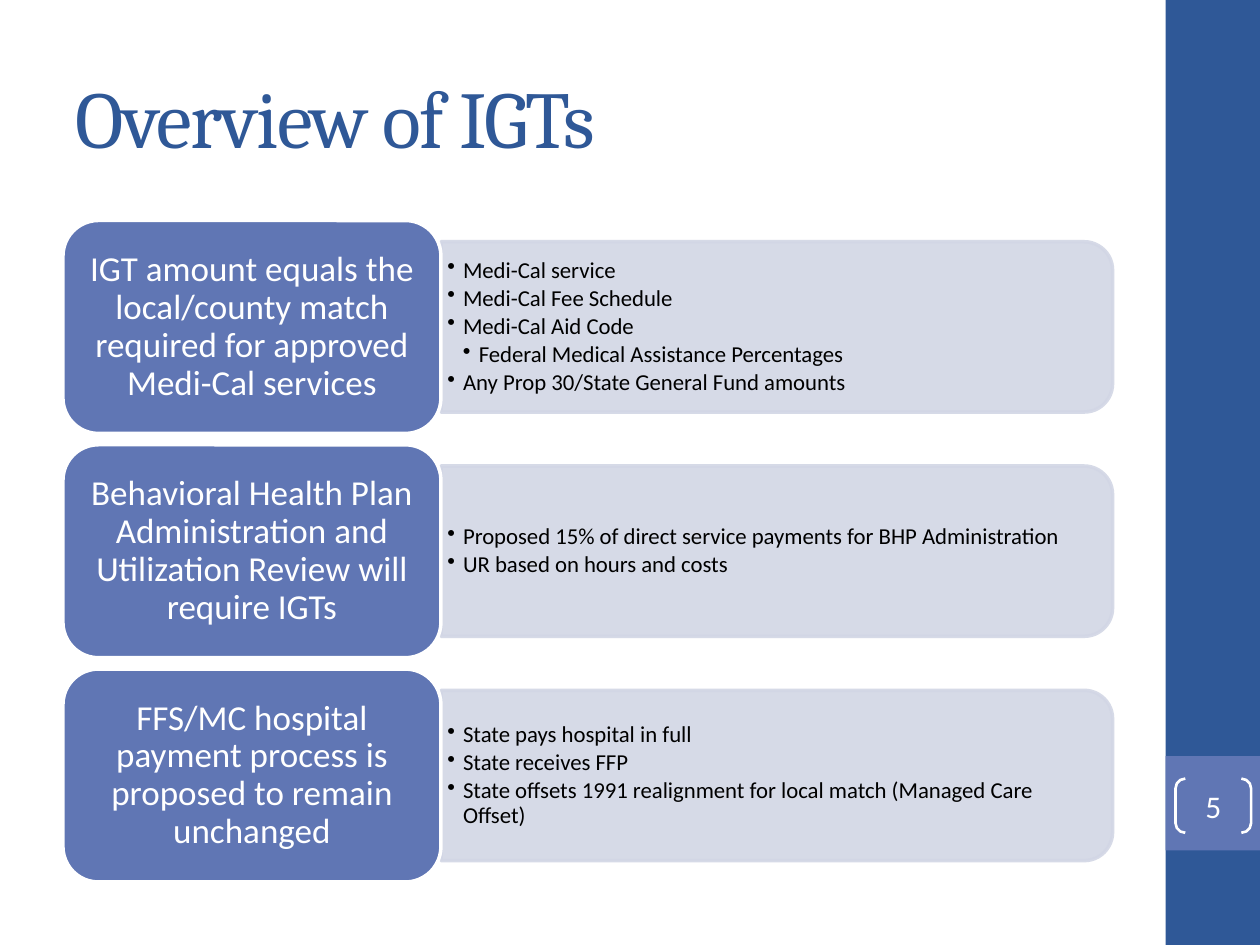
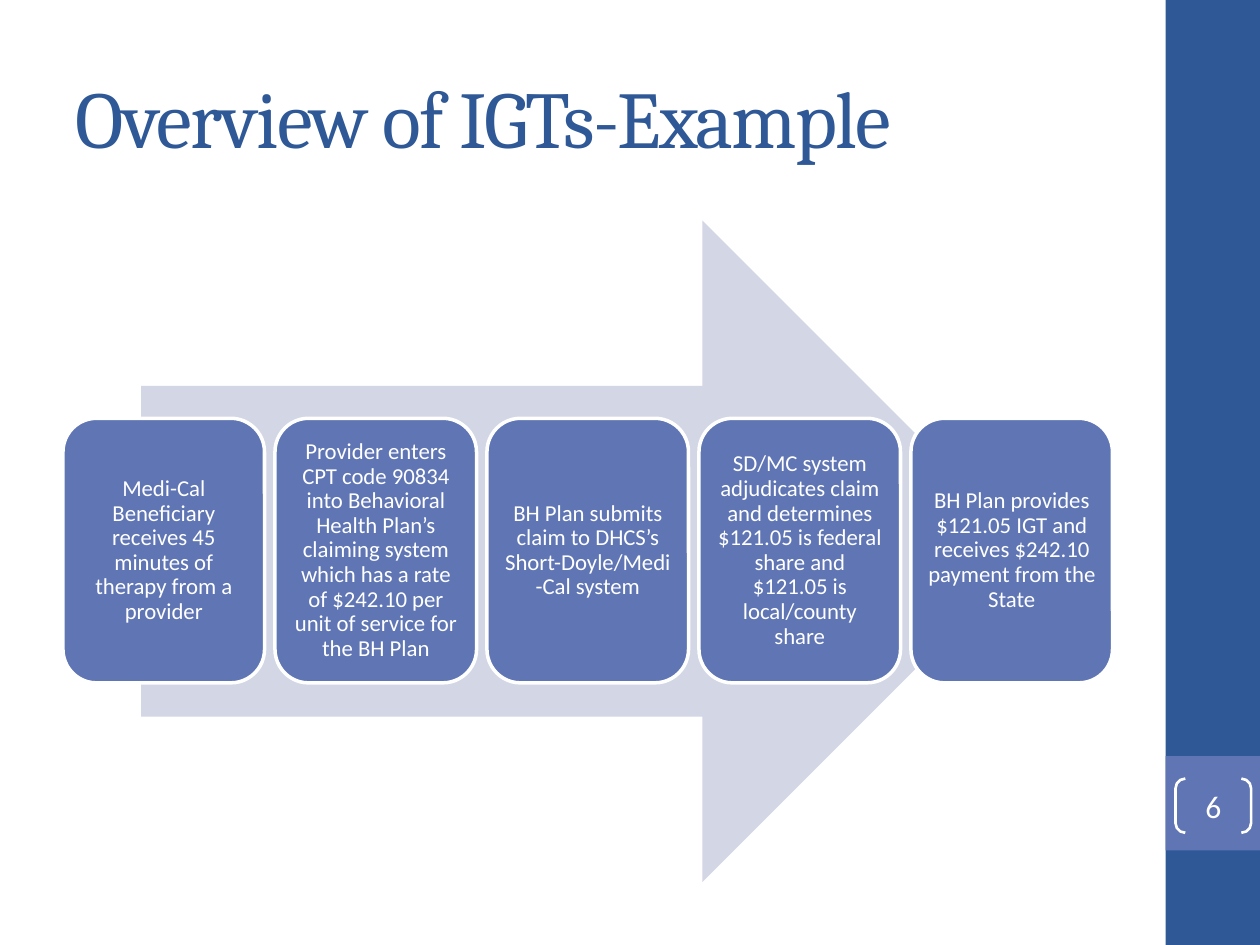
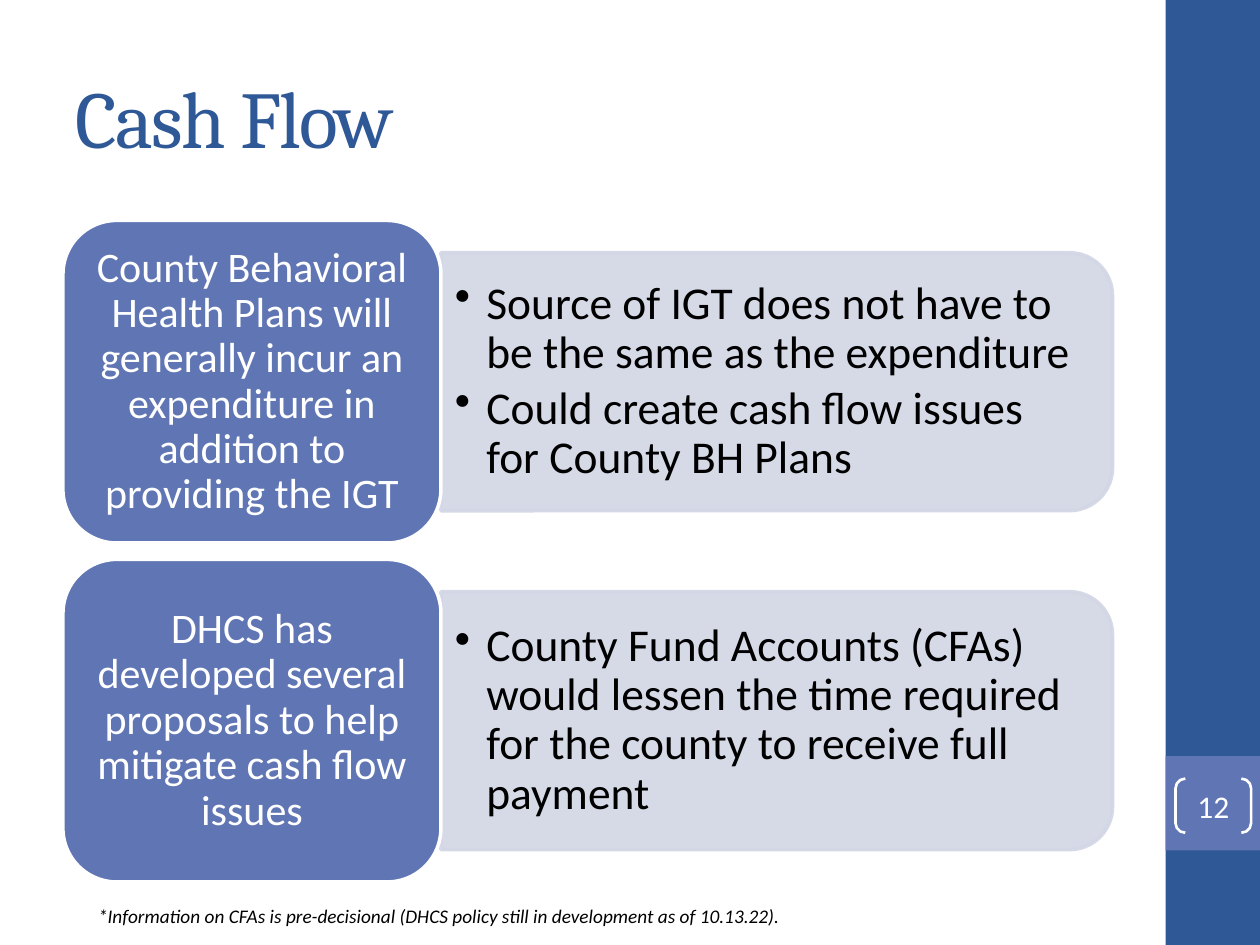
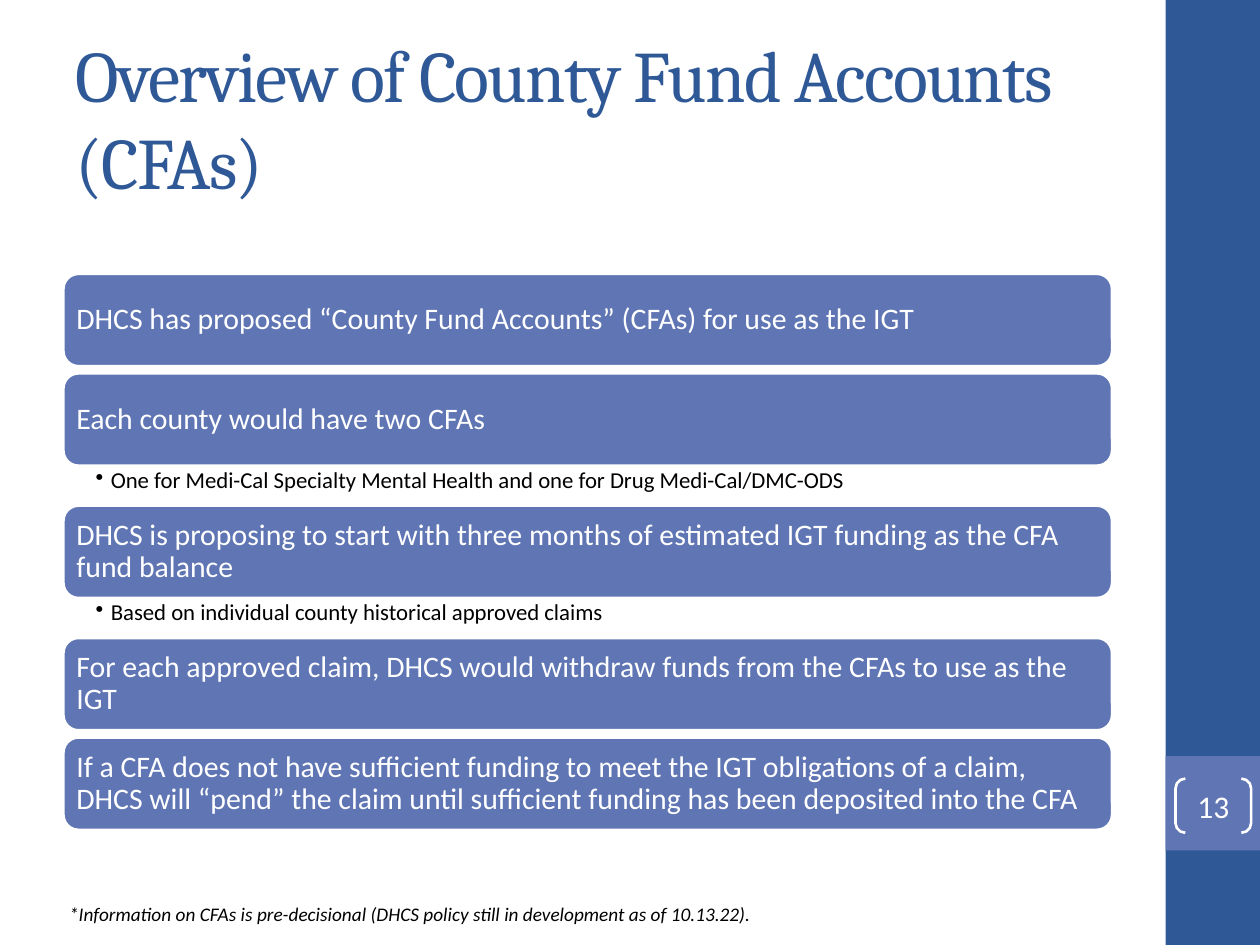
"""Build four slides on intergovernmental transfers (IGTs) and county fund accounts."""
from lxml import etree
from pptx import Presentation
from pptx.dml.color import RGBColor
from pptx.enum.shapes import MSO_SHAPE
from pptx.enum.text import MSO_ANCHOR, MSO_AUTO_SIZE, PP_ALIGN
from pptx.oxml.ns import qn
from pptx.util import Inches, Pt

NAVY = RGBColor(0x2F, 0x58, 0x97)
BLUE = RGBColor(0x60, 0x76, 0xB4)
PALE = RGBColor(0xD2, 0xD6, 0xE5)
WHITE = RGBColor(0xFF, 0xFF, 0xFF)
BLACK = RGBColor(0x00, 0x00, 0x00)
RECTANGLE = MSO_SHAPE.RECTANGLE
ROUNDED = MSO_SHAPE.ROUNDED_RECTANGLE
TOP_ROUNDED = MSO_SHAPE.ROUND_2_SAME_RECTANGLE
ARROW = MSO_SHAPE.RIGHT_ARROW
BRACKETS = MSO_SHAPE.DOUBLE_BRACKET
MIDDLE, TOP = MSO_ANCHOR.MIDDLE, MSO_ANCHOR.TOP
LEFT, CENTER = PP_ALIGN.LEFT, PP_ALIGN.CENTER
NO_AUTOFIT = MSO_AUTO_SIZE.NONE
TITLE_FONT, BODY_FONT = "Cambria", "Calibri"
MARGIN, CONTENT_WIDTH, CARD_WIDTH = 0.5, 8.33, 3
CONTENT_TOP = 1.75
FOOTNOTE = "*Information on CFAs is pre-decisional (DHCS policy still in development as of 10.13.22)."


def add_box(slide, kind, box, fill=None, line=None, line_width=2):
    """Add a flat preset shape; box is left, top, width, height in inches."""
    shape = slide.shapes.add_shape(kind, *map(Inches, box))
    shape.shadow.inherit = False
    if fill is None:
        shape.fill.background()
    else:
        shape.fill.solid()
        shape.fill.fore_color.rgb = fill
    if line is None:
        shape.line.fill.background()
    else:
        shape.line.color.rgb = line
        shape.line.width = Pt(line_width)
    return shape


def write(shape, lines, size, color=WHITE, font=BODY_FONT, insets=(0.1, 0.05, 0.1, 0.05),
          align=LEFT, anchor=MIDDLE, spacing=0.9, after=0.35, hang=0, italic=False):
    """Fill a shape with (level, text) lines; levels above 0 are bulleted."""
    frame = shape.text_frame
    margins = zip(("margin_left", "margin_top", "margin_right", "margin_bottom"), map(Inches, insets))
    frame_format = {"word_wrap": True, "auto_size": NO_AUTOFIT, "vertical_anchor": anchor, **dict(margins)}
    for name, value in frame_format.items():
        setattr(frame, name, value)
    for index, (level, text) in enumerate(lines):
        paragraph = frame.add_paragraph() if index else frame.paragraphs[0]
        paragraph_format = {"level": level, "alignment": align, "line_spacing": spacing,
                            "space_before": Pt(0), "space_after": Pt(size * after)}
        for name, value in paragraph_format.items():
            setattr(paragraph, name, value)
        run = paragraph.add_run()
        run.text = text
        for name, value in {"name": font, "size": Pt(size), "italic": italic}.items():
            setattr(run.font, name, value)
        run.font.color.rgb = color
        if level:
            properties = paragraph._p.get_or_add_pPr()
            properties.set("marL", str(Inches(hang * level)))
            properties.set("indent", str(-Inches(hang)))
            etree.SubElement(properties, qn("a:buChar")).set("char", "•")


presentation = Presentation()
presentation.slide_width = Inches(10)
presentation.slide_height = Inches(7.5)
layout = presentation.slide_layouts[5]

pages = [
    ("Overview of IGTs", 46, "5"),
    ("Overview of IGTs-Example", 46, "6"),
    ("Cash Flow", 46, "12"),
    ("Overview of County Fund Accounts (CFAs)", 41.4, "13"),
]
slides = []
for title_text, title_size, number in pages:
    slide = presentation.slides.add_slide(layout)
    title = slide.shapes.title
    title.left, title.top = Inches(MARGIN), Inches(0.3)
    title.width, title.height = Inches(CONTENT_WIDTH), Inches(1.25)
    write(title, [(0, title_text)], title_size, NAVY, TITLE_FONT, spacing=1.0, after=0)
    for run_properties in title.element.iter(qn("a:rPr")):
        run_properties.set("spc", "-100")
    brackets = add_box(slide, BRACKETS, (9.33, 6.18, 0.6, 0.43), line=WHITE, line_width=1.5)
    brackets.adjustments[0] = 0.18
    write(brackets, [(0, number)], 18, insets=(0, 0, 0, 0), align=CENTER, spacing=1.0, after=0)
    slides.append(slide)
overview, example, cash_flow, accounts = slides

side_band = add_box(overview, RECTANGLE, (9.25, 0, 0.75, 7.5), NAVY)
number_band = add_box(overview, RECTANGLE, (9.25, 6, 0.75, 0.75), BLUE)
for position, band in enumerate((side_band, number_band), start=2):
    layout.shapes.element.insert(position, band.element)

overview_rows = [
    ("IGT amount equals the local/county match required for approved Medi-Cal services",
     [(1, "Medi-Cal service"), (1, "Medi-Cal Fee Schedule"), (1, "Medi-Cal Aid Code"),
      (2, "Federal Medical Assistance Percentages"),
      (1, "Any Prop 30/State General Fund amounts")]),
    ("Behavioral Health Plan Administration and Utilization Review will require IGTs",
     [(1, "Proposed 15% of direct service payments for BHP Administration"),
      (1, "UR based on hours and costs")]),
    ("FFS/MC hospital payment process is proposed to remain unchanged",
     [(1, "State pays hospital in full"), (1, "State receives FFP"),
      (1, "State offsets 1991 realignment for local match (Managed Care Offset)")]),
]
cash_flow_rows = [
    ("County Behavioral Health Plans will generally incur an expenditure in addition to providing the IGT",
     [(1, "Source of IGT does not have to be the same as the expenditure"),
      (1, "Could create cash flow issues for County BH Plans")]),
    ("DHCS has developed several proposals to help mitigate cash flow issues",
     [(1, "County Fund Accounts (CFAs) would lessen the time required for the county to receive full payment")]),
]
row_styles = [
    (overview, overview_rows, 1.69, 1.78,
     {"size": 20, "insets": (0.08, 0.04, 0.08, 0.04)},
     {"size": 13, "insets": (0.05, 0.03, 0.05, 0.03), "hang": 0.125}, 5.27),
    (cash_flow, cash_flow_rows, 2.56, 2.69,
     {"size": 24},
     {"size": 26, "insets": (0.11, 0.05, 0.11, 0.05), "hang": 0.25}, 5.23),
]
panel_left, panel_length = MARGIN + CARD_WIDTH, CONTENT_WIDTH - CARD_WIDTH
for slide, rows, card_height, pitch, card_style, list_style, list_width in row_styles:
    panel_height = card_height * 0.8
    list_height = panel_height * 0.9
    for index, (heading, points) in enumerate(rows):
        top = CONTENT_TOP + index * pitch
        middle = top + card_height / 2
        panel = add_box(slide, TOP_ROUNDED,
                        (panel_left + (panel_length - panel_height) / 2, middle - panel_length / 2,
                         panel_height, panel_length), PALE, PALE)
        panel.rotation = 90
        for panel_color in panel.element.iter(qn("a:srgbClr")):
            etree.SubElement(panel_color, qn("a:alpha")).set("val", "90000")
        list_box = slide.shapes.add_textbox(Inches(panel_left), Inches(middle - list_height / 2),
                                            Inches(list_width), Inches(list_height))
        write(list_box, points, color=BLACK, after=0.15, **list_style)
        card = add_box(slide, ROUNDED, (MARGIN, top, CARD_WIDTH, card_height), BLUE, WHITE)
        write(card, [(0, heading)], align=CENTER, **card_style)

steps = [
    "Medi-Cal Beneficiary receives 45 minutes of therapy from a provider",
    "Provider enters CPT code 90834 into Behavioral Health Plan’s claiming system which has a rate of "
    "$242.10 per unit of service for the BH Plan",
    "BH Plan submits claim to DHCS’s Short-Doyle/Medi-Cal system",
    "SD/MC system adjudicates claim and determines $121.05 is federal share and $121.05 is local/county share",
    "BH Plan provides $121.05 IGT and receives $242.10 payment from the State",
]
add_box(example, ARROW, (1.12, CONTENT_TOP, 7.08, 5.25), PALE)
step_width = 1.6
step_pitch = (CONTENT_WIDTH - step_width) / (len(steps) - 1)
for index, text in enumerate(steps):
    step = add_box(example, ROUNDED, (MARGIN + index * step_pitch, 3.32, step_width, 2.1), BLUE, WHITE)
    write(step, [(0, text)], 13, insets=(0.05,) * 4, align=CENTER)

account_points = [
    ("DHCS has proposed “County Fund Accounts” (CFAs) for use as the IGT", None),
    ("Each county would have two CFAs",
     "One for Medi-Cal Specialty Mental Health and one for Drug Medi-Cal/DMC-ODS"),
    ("DHCS is proposing to start with three months of estimated IGT funding as the CFA fund balance",
     "Based on individual county historical approved claims"),
    ("For each approved claim, DHCS would withdraw funds from the CFAs to use as the IGT", None),
    ("If a CFA does not have sufficient funding to meet the IGT obligations of a claim, DHCS will “pend” "
     "the claim until sufficient funding has been deposited into the CFA", None),
]
bar_height, bar_gap, detail_height = 0.74, 0.05, 0.31
top = 2.17
for statement, detail in account_points:
    bar = add_box(accounts, ROUNDED, (MARGIN, top, CONTENT_WIDTH, bar_height), BLUE, WHITE)
    write(bar, [(0, statement)], 17, insets=(0.07,) * 4)
    top += bar_height
    if detail:
        detail_box = accounts.shapes.add_textbox(Inches(MARGIN), Inches(top),
                                                 Inches(CONTENT_WIDTH), Inches(detail_height))
        write(detail_box, [(1, detail)], 13, BLACK, insets=(0.26, 0.02, 0.13, 0.02),
              anchor=TOP, after=0.2, hang=0.12)
    top += detail_height if detail else bar_gap

for slide, left, top in ((cash_flow, 0.68, 7.13), (accounts, 0.45, 7.11)):
    footnote = slide.shapes.add_textbox(Inches(left), Inches(top), Inches(8.26), Inches(0.29))
    write(footnote, [(0, FOOTNOTE)], 11, BLACK, anchor=TOP, spacing=1.0, after=0, italic=True)

presentation.save("out.pptx")
